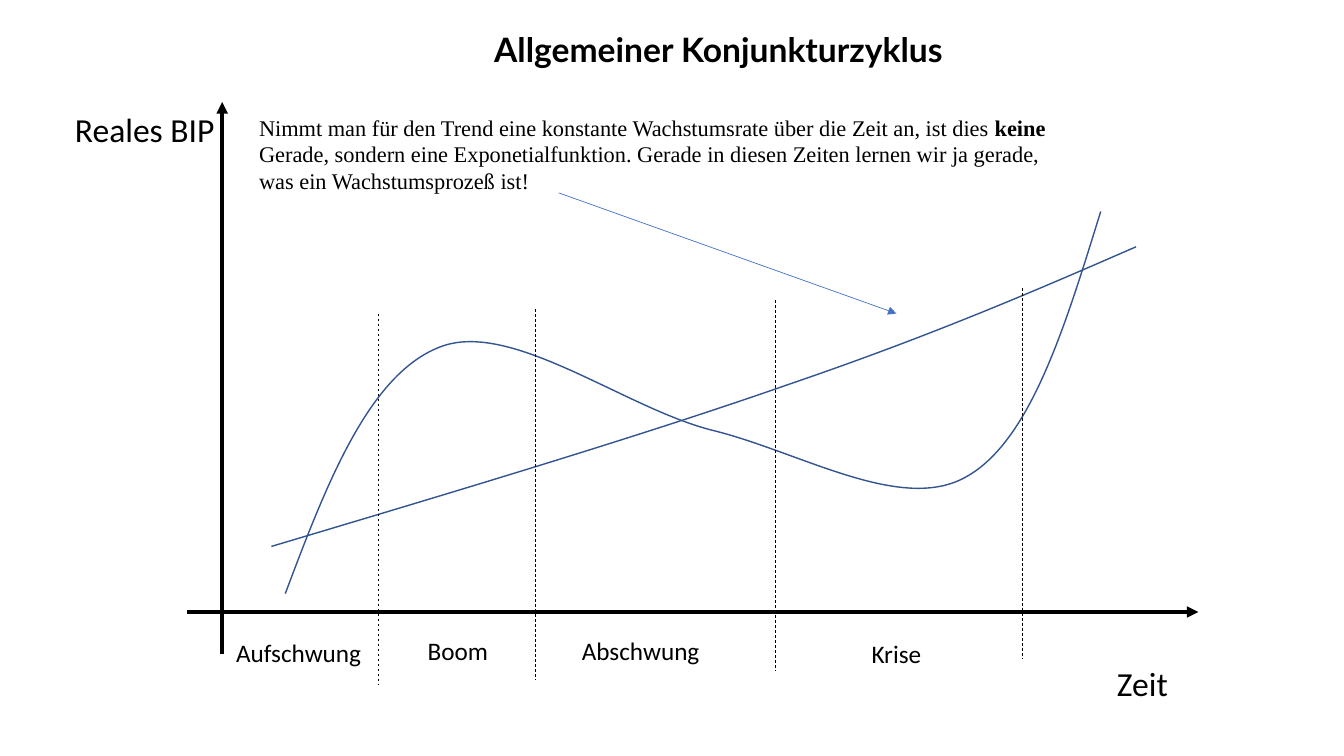
"""Builds a slide showing the general business cycle around its growth trend."""
from dataclasses import dataclass

from lxml.etree import SubElement
from pptx import Presentation
from pptx.dml.color import RGBColor
from pptx.enum.dml import MSO_LINE
from pptx.enum.text import MSO_ANCHOR, MSO_AUTO_SIZE, PP_ALIGN
from pptx.oxml.ns import qn
from pptx.util import Cm, Pt

Point = tuple[float, float]
BLACK, CURVE_BLUE, ARROW_BLUE = "000000", "325491", "4472C4"
DIVIDER_LENGTH = 9.33


@dataclass
class Label:
    text: str
    left: float
    top: float
    width: float
    height: float = 1.02
    size: float = 18
    align: PP_ALIGN = PP_ALIGN.CENTER


@dataclass
class Line:
    start: Point
    end: Point
    width: float
    color: str = BLACK
    arrow: bool = False
    dashed: bool = False


LABELS = [
    Label("Zeit", 27.9, 16.59, 1.8, 1.27, 24, PP_ALIGN.LEFT),
    Label("Reales BIP", 1.64, 2.62, 4.06, 1.27, 24, PP_ALIGN.LEFT),
    Label("Aufschwung", 5.7, 15.93, 3.71, align=PP_ALIGN.LEFT),
    Label("Boom", 10.51, 15.88, 2.06),
    Label("Abschwung", 14.39, 15.89, 3.51),
    Label("Krise", 21.7, 15.95, 1.78),
]
AXES = [
    Line((5.6, 16.48), (5.6, 2.57), 2.75, arrow=True),
    Line((4.7, 15.42), (30.2, 15.42), 2.75, arrow=True),
]
DIVIDER_TOPS = [(9.54, 7.9), (13.48, 7.79), (19.53, 7.57), (25.77, 7.25)]
DIVIDERS = [Line((x, y), (x, y + DIVIDER_LENGTH), 0.5, dashed=True) for x, y in DIVIDER_TOPS]
NOTE_ARROW = Line((14.08, 4.86), (22.59, 7.9), 0.5, ARROW_BLUE, arrow=True)
TREND = [(6.84, 13.77), (11.53, 12.37), (16.21, 10.97), (19.84, 9.7),
         (23.47, 8.46), (26.06, 7.34), (28.63, 6.22)]
CYCLE = [(7.19, 14.96), (8.23, 12.19), (9.3, 9.42), (11.1, 8.74),
         (12.9, 8.05), (15.77, 10.31), (17.98, 10.85),
         (20.19, 11.4), (22.73, 12.95), (24.36, 12.01),
         (25.98, 11.1), (26.85, 8.2), (27.74, 5.33)]
NOTE = [
    ("Nimmt man für den Trend eine konstante Wachstumsrate über die Zeit an, ist dies ", False),
    ("keine ", True),
    ("Gerade, sondern eine Exponetialfunktion. Gerade in diesen Zeiten lernen wir ja gerade, "
     "was ein Wachstumsprozeß ist!", False),
]


def paint(target, color: str) -> None:
    target.rgb = RGBColor.from_string(color)


def style_font(font, name: str, size: float, bold: bool = False) -> None:
    font.name, font.size, font.bold = name, Pt(size), bold
    paint(font.color, BLACK)


def add_line(page, line: Line) -> None:
    points = [Cm(value) for value in (*line.start, *line.end)]
    connector = page.shapes.add_connector(1, *points)
    connector.line.width = Pt(line.width)
    connector.line.fill.solid()
    paint(connector.line.color, line.color)
    if line.dashed:
        connector.line.dash_style = MSO_LINE.DASH
    properties = connector._element.spPr
    if line.arrow:
        SubElement(properties.find(qn("a:ln")), qn("a:tailEnd"), type="triangle")
    SubElement(properties, qn("a:effectLst"))


def add_curve(page, controls: list[Point]) -> None:
    start, *others = [(Cm(x), Cm(y)) for x, y in controls]
    builder = page.shapes.build_freeform(*start)
    builder.add_line_segments(others, close=False)
    curve = builder.convert_to_shape()
    curve.shadow.inherit = False
    curve.fill.background()
    curve.line.width = Pt(1)
    paint(curve.line.color, CURVE_BLUE)
    outline = next(curve._element.iter(qn("a:path")))
    segments = outline.findall(qn("a:lnTo"))
    for first in range(0, len(segments), 3):
        bezier = SubElement(outline, qn("a:cubicBezTo"))
        for segment in segments[first:first + 3]:
            bezier.append(segment[0])
            outline.remove(segment)


def add_label(page, label: Label) -> None:
    box = page.shapes.add_textbox(Cm(label.left), Cm(label.top), Cm(label.width), Cm(label.height))
    frame = box.text_frame
    frame.text = label.text
    frame.word_wrap = False
    frame.auto_size = MSO_AUTO_SIZE.SHAPE_TO_FIT_TEXT
    para = frame.paragraphs[0]
    para.alignment = label.align
    style_font(para.runs[0].font, "Calibri", label.size)


def set_title(page) -> None:
    title = page.shapes.title
    title.left, title.top, title.width, title.height = Cm(12.2), Cm(0.61), Cm(16.13), Cm(1.27)
    frame = title.text_frame
    frame.text = "Allgemeiner Konjunkturzyklus"
    frame.word_wrap = True
    frame.auto_size = MSO_AUTO_SIZE.SHAPE_TO_FIT_TEXT
    frame.vertical_anchor = MSO_ANCHOR.MIDDLE
    para = frame.paragraphs[0]
    para.alignment = PP_ALIGN.LEFT
    style_font(para.runs[0].font, "Lato", 24, True)


def add_note(page) -> None:
    frame = page.shapes.add_textbox(Cm(6.28), Cm(2.74), Cm(21.13), Cm(2.59)).text_frame
    frame.word_wrap = True
    for text, bold in NOTE:
        span = frame.paragraphs[0].add_run()
        span.text = text
        style_font(span.font, "Times New Roman", 16, bold)


def main() -> None:
    deck = Presentation()
    deck.slide_width, deck.slide_height = Cm(33.87), Cm(19.05)
    page = deck.slides.add_slide(deck.slide_layouts[5])
    set_title(page)
    for axis in AXES:
        add_line(page, axis)
    for controls in (TREND, CYCLE):
        add_curve(page, controls)
    for label in LABELS:
        add_label(page, label)
    for divider in DIVIDERS:
        add_line(page, divider)
    add_note(page)
    add_line(page, NOTE_ARROW)
    deck.save("out.pptx")


if __name__ == "__main__":
    main()
